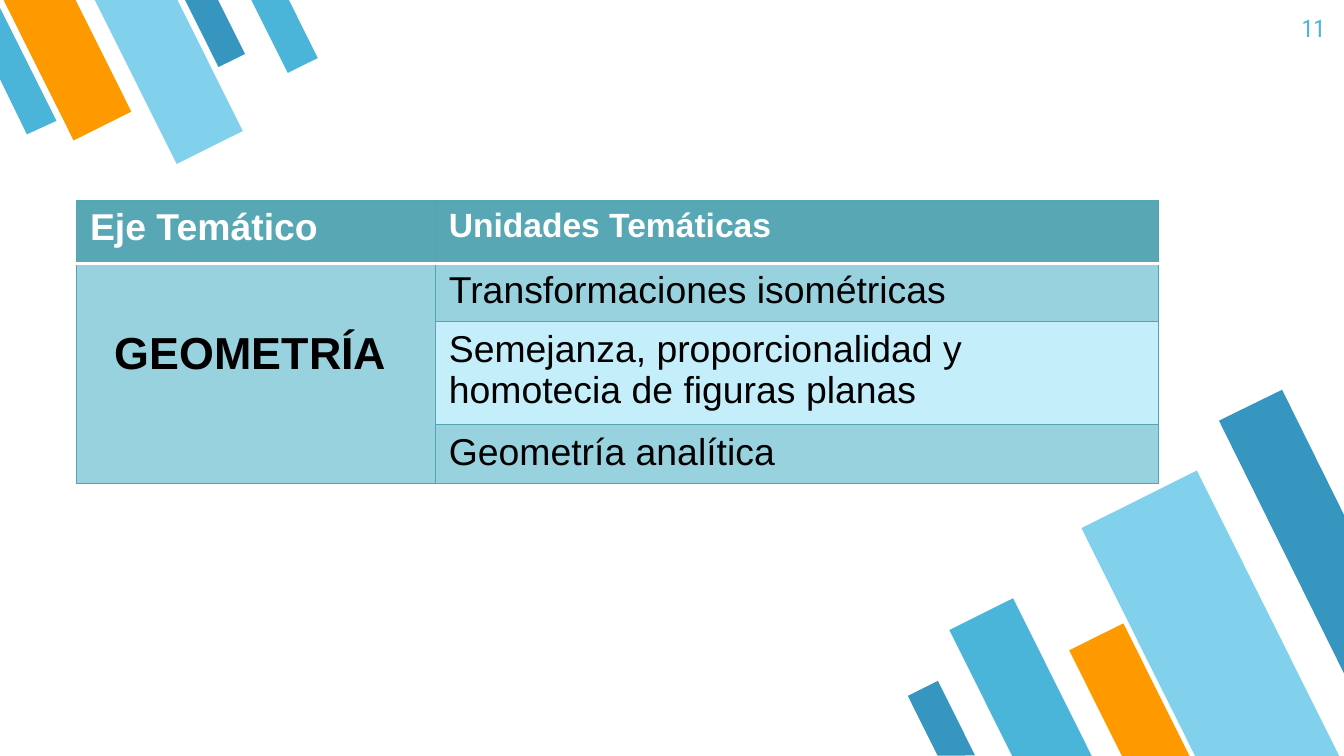
import pptx
import pptx.dml.color
import pptx.enum.shapes
import pptx.enum.text
import pptx.oxml
import pptx.oxml.ns
import pptx.util

Inches = pptx.util.Inches
RGBColor = pptx.dml.color.RGBColor
ALIGN = pptx.enum.text.PP_ALIGN

BLUE = RGBColor(0x4B, 0xB5, 0xD9)
PALE_BLUE = RGBColor(0x81, 0xD1, 0xEC)
DARK_BLUE = RGBColor(0x37, 0x96, 0xBF)
ORANGE = RGBColor(0xFF, 0x99, 0x00)
HEADER_TEAL = RGBColor(0x57, 0xA7, 0xB5)
BORDER_TEAL = RGBColor(0x53, 0xA5, 0xB3)
BAND_DARK = RGBColor(0x98, 0xD2, 0xDE)
BAND_LIGHT = RGBColor(0xC4, 0xEE, 0xFA)
WHITE = RGBColor(0xFF, 0xFF, 0xFF)
BLACK = RGBColor(0, 0, 0)


def write_text(text_frame, text, size, color, font="Arial", bold=False, align=ALIGN.LEFT):
    paragraph = text_frame.paragraphs[0]
    paragraph.alignment = align
    run = paragraph.add_run()
    run.text = text
    run.font.name = font
    run.font.size = pptx.util.Pt(size)
    run.font.bold = bold
    run.font.color.rgb = color


def paint(shape, color):
    shape.shadow.inherit = False
    shape.fill.solid()
    shape.fill.fore_color.rgb = color
    shape.line.fill.background()


def add_corner_bars(slide, left, top, rotation, bars, cut_points, cut_color):
    for x, y, width, height, color in bars:
        bar = slide.shapes.add_shape(
            pptx.enum.shapes.MSO_SHAPE.FLOWCHART_MANUAL_INPUT,
            Inches(left + x), Inches(top + y), Inches(width), Inches(height))
        bar.rotation = rotation
        bar._element.spPr.find(pptx.oxml.ns.qn("a:xfrm")).set("flipH", "1")
        paint(bar, color)
    points = [(Inches(left + x), Inches(top + y)) for x, y in cut_points]
    builder = slide.shapes.build_freeform(*points[0])
    builder.add_line_segments(points[1:], close=True)
    paint(builder.convert_to_shape(), cut_color)


def add_page_number(slide, left, top, width, height):
    box = slide.shapes.add_textbox(Inches(left), Inches(top), Inches(width), Inches(height))
    frame = box.text_frame
    frame.word_wrap = True
    frame.margin_left = frame.margin_right = Inches(0.1)
    frame.margin_top = frame.margin_bottom = Inches(0.1)
    write_text(frame, "11", 13, BLUE, font="Roboto Condensed", align=ALIGN.RIGHT)


def set_border(cell, side, color, width):
    line = pptx.oxml.parse_xml(
        f'<a:ln{side} {pptx.oxml.ns.nsdecls("a")} w="{pptx.util.Pt(width)}">'
        f'<a:solidFill><a:srgbClr val="{color}"/></a:solidFill></a:ln{side}>')
    cell._tc.get_or_add_tcPr().append(line)


def style_cell(cell, row, fill):
    for side in "LRTB":
        on_header_rule = (row, side) in ((0, "B"), (1, "T"))
        color, width = (WHITE, 2) if on_header_rule else (BORDER_TEAL, 0.75)
        set_border(cell, side, color, width)
    cell.fill.solid()
    cell.fill.fore_color.rgb = fill


def add_topics_table(slide, left, top, height, column_widths, row_heights):
    frame = slide.shapes.add_table(
        len(row_heights), len(column_widths), Inches(left), Inches(top),
        Inches(sum(column_widths)), Inches(height))
    table = frame.table
    for column, column_width in zip(table.columns, column_widths):
        column.width = Inches(column_width)
    for row, row_height in zip(table.rows, row_heights):
        row.height = Inches(row_height)
    frame.height = Inches(height)

    right_fills = [HEADER_TEAL, BAND_DARK, BAND_LIGHT, BAND_DARK]
    for row, fill in enumerate(right_fills):
        style_cell(table.cell(row, 0), row, BAND_DARK if row else HEADER_TEAL)
        style_cell(table.cell(row, 1), row, fill)

    axis = table.cell(1, 0)
    axis.merge(table.cell(3, 0))
    axis.margin_top = Inches(0.49)
    write_text(axis.text_frame, "GEOMETRÍA ", 24, BLACK, bold=True, align=ALIGN.CENTER)
    write_text(table.cell(0, 0).text_frame, "Eje Temático", 20, WHITE, bold=True)
    write_text(table.cell(0, 1).text_frame, "Unidades Temáticas", 18, WHITE, bold=True)
    units = ["Transformaciones isométricas",
             "Semejanza, proporcionalidad y homotecia de figuras planas",
             "Geometría analítica"]
    for row, unit in enumerate(units, start=1):
        write_text(table.cell(row, 1).text_frame, unit, 20, BLACK)


def main():
    presentation = pptx.Presentation()
    presentation.slide_width = Inches(10)
    presentation.slide_height = presentation.slide_width * 9 // 16
    slide = presentation.slides.add_slide(presentation.slide_layouts[6])

    bottom_bars = [(0.45, 1.6, 0.53, 1.32, BLUE), (1.65, 0.69, 0.96, 2.39, PALE_BLUE),
                   (1.3, 1.78, 0.45, 1.11, ORANGE), (0, 2.19, 0.25, 0.62, DARK_BLUE)]
    bottom_cut = [(2.66, 0), (2.19, 0.23), (3.12, 2.11), (3.12, 0.93)]
    add_corner_bars(slide, 6.88, 2.9, 153.5, bottom_bars, bottom_cut, DARK_BLUE)

    top_bars = [(1.49, 0.12, 0.22, 0.56, DARK_BLUE), (0.26, 0.02, 0.48, 1.18, ORANGE),
                (0.98, 0, 0.55, 1.37, PALE_BLUE), (1.99, 0.1, 0.25, 0.62, BLUE)]
    top_cut = [(0.2, 1.2), (0.42, 1.1), (0, 0.26), (0, 0.79)]
    add_corner_bars(slide, 0, -0.2, 333.5, top_bars, top_cut, BLUE)

    add_page_number(slide, 9.36, 0, 0.6, 0.43)
    add_topics_table(slide, 0.57, 1.49, 2.1, [2.67, 5.38], [0.47, 0.41, 0.41, 0.41])
    presentation.save("out.pptx")


if __name__ == "__main__":
    main()
